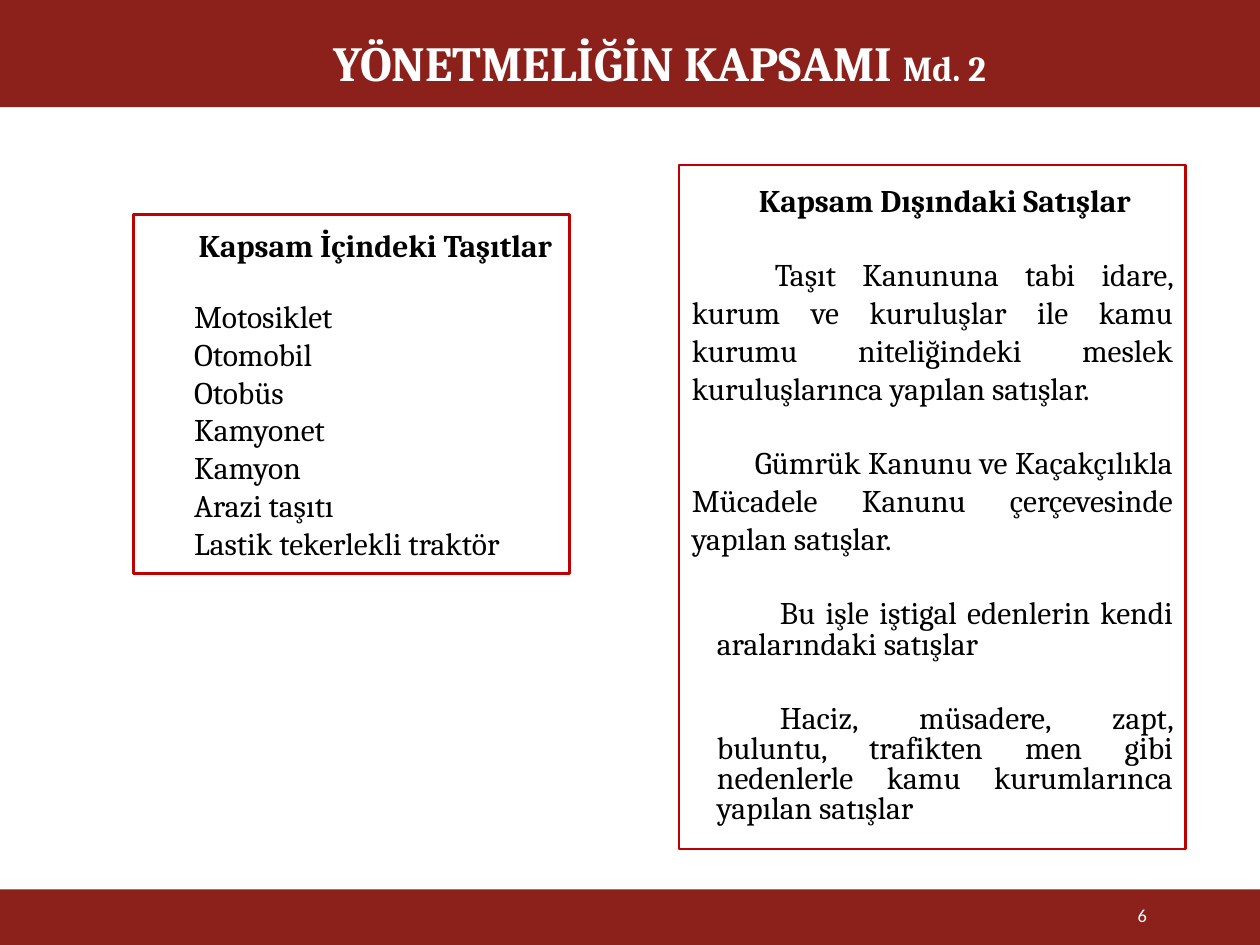
"""Build the slide on the scope of the regulation: vehicles covered and sales excluded."""
from dataclasses import dataclass

from lxml.etree import SubElement
from pptx import Presentation
from pptx.dml.color import RGBColor
from pptx.enum.shapes import MSO_SHAPE as Shape
from pptx.enum.text import MSO_ANCHOR as Anchor, MSO_AUTO_SIZE as AutoSize, PP_ALIGN as Align
from pptx.oxml.ns import qn
from pptx.util import Inches, Pt

COLUMNS, ROWS = 100, 75
CELL = Inches(0.1)


@dataclass(frozen=True)
class Theme:
    band: RGBColor = RGBColor(0x8C, 0x21, 0x1B)
    border: RGBColor = RGBColor(0xC0, 0x00, 0x00)
    paper: RGBColor = RGBColor(0xFF, 0xFF, 0xFF)
    ink: RGBColor = RGBColor(0x00, 0x00, 0x00)
    serif: str = "Cambria"
    sans: str = "Calibri"
    title: float = 28
    article: float = 20
    text: float = 18
    number: float = 10.5


@dataclass(frozen=True)
class Frame:
    column: float
    row: float
    columns: float
    rows: float


@dataclass(frozen=True)
class Line:
    text: str
    align: Align = Align.LEFT
    bold: bool = False
    margin: float = 0
    indent: float = 0
    spacing: float = 1
    after: float = 0


THEME = Theme()
BANDS = [Frame(0, 0, COLUMNS, 8.5), Frame(0, 70.6, COLUMNS, 4.4)]
TITLE = Frame(16.9, 2.1, 70.9, 4.7)
NUMBER = Frame(81.2, 70.6, 10.8, 4)
COVERED = Frame(10.6, 17, 34.6, 28.5)
EXCLUDED = Frame(53.9, 13.1, 40.2, 54.3)
VEHICLES = ["Motosiklet", "Otomobil", "Otobüs", "Kamyonet", "Kamyon", "Arazi taşıtı",
            "Lastik tekerlekli traktör"]
COVERED_LINES = [
    Line("Kapsam İçindeki Taşıtlar", Align.CENTER, True, 0.58, -0.2, after=19),
    *(Line(vehicle, margin=0.58, indent=-0.2) for vehicle in VEHICLES),
]
EXCLUDED_LINES = [
    Line("Kapsam Dışındaki Satışlar", Align.CENTER, True, 0.2, spacing=0.8, after=21),
    Line("Taşıt Kanununa tabi idare, kurum ve kuruluşlar ile kamu kurumu niteliğindeki "
         "meslek kuruluşlarınca yapılan satışlar.", Align.JUSTIFY, indent=0.66, after=21),
    Line("Gümrük Kanunu ve Kaçakçılıkla Mücadele Kanunu çerçevesinde yapılan satışlar.",
         Align.JUSTIFY, indent=0.5, after=25),
    Line("Bu işle iştigal edenlerin kendi aralarındaki satışlar",
         Align.JUSTIFY, margin=0.2, indent=0.5, spacing=0.8, after=25),
    Line("Haciz, müsadere, zapt, buluntu, trafikten men gibi nedenlerle kamu kurumlarınca "
         "yapılan satışlar", Align.JUSTIFY, margin=0.2, indent=0.5, spacing=0.8),
]


def measure(frame: Frame) -> list[int]:
    """Turn grid cells into left, top, width and height."""
    return [round(cells * CELL) for cells in (frame.column, frame.row, frame.columns, frame.rows)]


def place(box, frame: Frame, anchor: Anchor) -> None:
    """Move a text shape to its frame and fix its text behaviour."""
    box.left, box.top, box.width, box.height = measure(frame)
    box.text_frame.word_wrap = True
    box.text_frame.auto_size = AutoSize.NONE
    box.text_frame.vertical_anchor = anchor


def add_span(para, text: str, size: float, color: RGBColor, face: str, bold: bool = False):
    """Add one formatted run to a paragraph."""
    span = para.add_run()
    span.text = text
    span.font.size = Pt(size)
    span.font.bold = bold
    span.font.color.rgb = color
    span.font.name = face
    return span


def add_shadow(span) -> None:
    """Give a run a soft dark shadow."""
    properties = span.font._element
    effects = SubElement(properties, qn("a:effectLst"))
    shadow = SubElement(effects, qn("a:outerShdw"), blurRad="38100", dist="38100", dir="2700000")
    color = SubElement(shadow, qn("a:srgbClr"), val=str(THEME.ink))
    SubElement(color, qn("a:alpha"), val="43000")
    properties.find(qn("a:solidFill")).addnext(effects)


def add_band(page, frame: Frame) -> None:
    """Draw a full-width band behind the placeholders."""
    band = page.shapes.add_shape(Shape.RECTANGLE, *measure(frame))
    band.shadow.inherit = False
    band.fill.solid()
    band.fill.fore_color.rgb = THEME.band
    band.line.fill.background()
    page.shapes._spTree.insert(2, band._element)


def fill_title(box) -> None:
    """Write the title with its smaller article number."""
    place(box, TITLE, Anchor.TOP)
    para = box.text_frame.paragraphs[0]
    para.alignment = Align.CENTER
    for text, size in (("YÖNETMELİĞİN KAPSAMI ", THEME.title), ("Md. 2", THEME.article)):
        add_shadow(add_span(para, text, size, THEME.paper, THEME.serif, True))


def fill_panel(box, frame: Frame, lines: list[Line]) -> None:
    """Turn a body placeholder into a bordered panel of lines."""
    place(box, frame, Anchor.MIDDLE)
    box.fill.solid()
    box.fill.fore_color.rgb = THEME.paper
    box.line.color.rgb = THEME.border
    box.line.width = Pt(1.5)
    for index, line in enumerate(lines):
        para = box.text_frame.add_paragraph() if index else box.text_frame.paragraphs[0]
        properties = para._p.get_or_add_pPr()
        properties.set("marL", str(Inches(line.margin)))
        properties.set("indent", str(Inches(line.indent)))
        SubElement(properties, qn("a:buNone"))
        para.alignment = line.align
        para.line_spacing = line.spacing
        para.space_before = Pt(0)
        para.space_after = Pt(line.after)
        add_span(para, line.text, THEME.text, THEME.ink, THEME.serif, line.bold)


def add_number(page) -> None:
    """Write the slide number on the lower band."""
    box = page.shapes.add_textbox(*measure(NUMBER))
    place(box, NUMBER, Anchor.MIDDLE)
    para = box.text_frame.paragraphs[0]
    para.alignment = Align.RIGHT
    add_span(para, "6", THEME.number, THEME.paper, THEME.sans)


def main() -> None:
    """Build and save the deck."""
    deck = Presentation()
    deck.slide_width, deck.slide_height = COLUMNS * CELL, ROWS * CELL
    page = deck.slides.add_slide(deck.slide_layouts[3])
    title, covered, excluded = page.placeholders
    for frame in BANDS:
        add_band(page, frame)
    fill_title(title)
    fill_panel(covered, COVERED, COVERED_LINES)
    fill_panel(excluded, EXCLUDED, EXCLUDED_LINES)
    add_number(page)
    deck.save("out.pptx")


if __name__ == "__main__":
    main()
